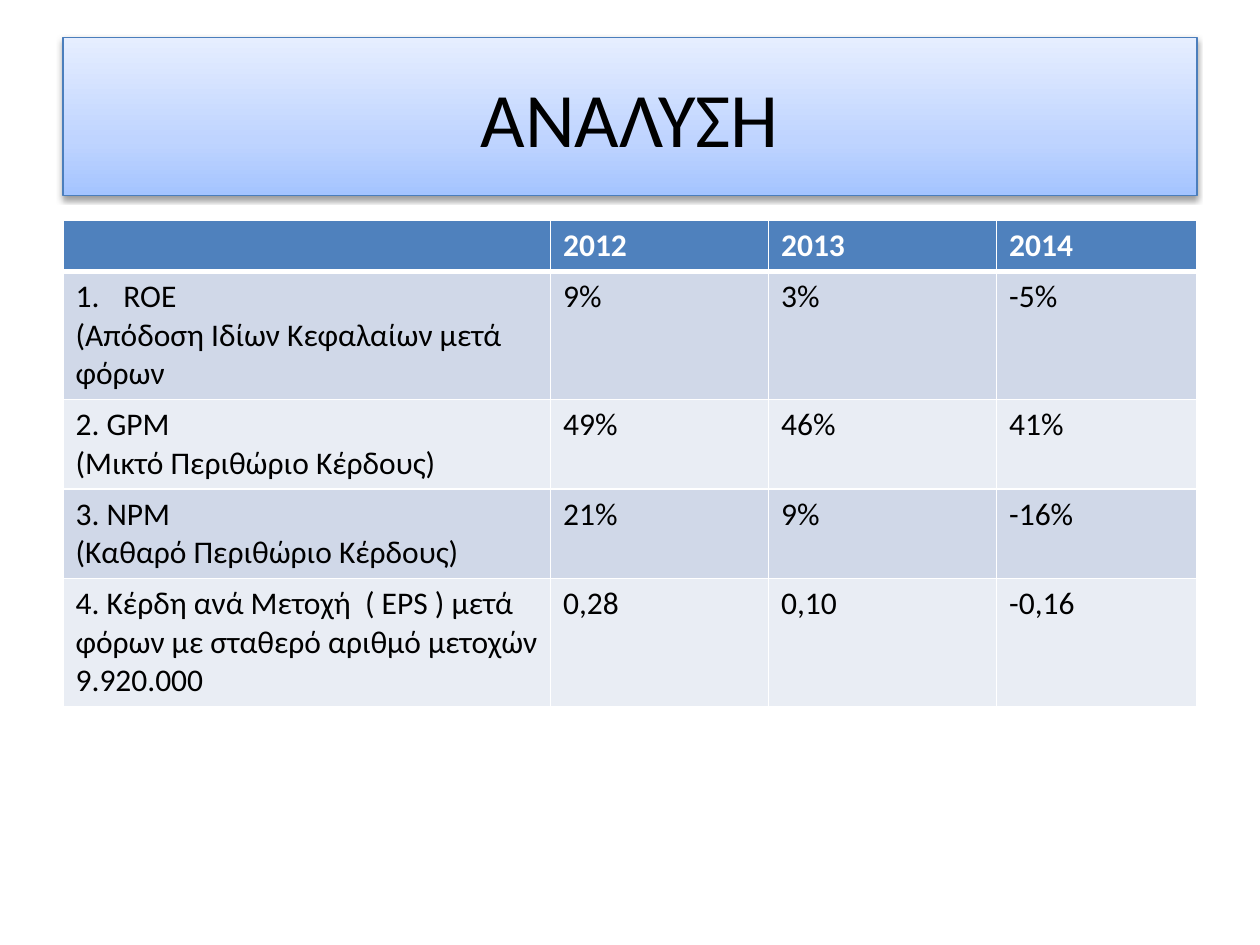
from lxml.etree import SubElement
from pptx import Presentation
from pptx.dml.color import RGBColor
from pptx.enum.shapes import MSO_SHAPE as Shape
from pptx.enum.text import MSO_ANCHOR as Anchor, PP_ALIGN as Align
from pptx.oxml import parse_xml
from pptx.oxml.ns import nsdecls, qn
from pptx.util import Inches, Pt

BLACK = RGBColor(0x00, 0x00, 0x00)
WHITE = RGBColor(0xFF, 0xFF, 0xFF)
HEADER_BLUE = RGBColor(0x4F, 0x81, 0xBD)
OUTLINE_BLUE = RGBColor(0x4B, 0x7E, 0xBC)
BANDS = (RGBColor(0xD0, 0xD8, 0xE8), RGBColor(0xE9, 0xED, 0xF4))
GRADIENT = (
    (0, RGBColor(0xA4, 0xC4, 0xFF)),
    (35, RGBColor(0xBF, 0xD4, 0xFF)),
    (100, RGBColor(0xE6, 0xEE, 0xFF)),
)

FONT = "Calibri"
MARGIN, CONTENT_WIDTH = 0.5, 9
COLUMN_WIDTHS = (3.87, 1.73, 1.81, 1.59)
CELL_PADDING, LINE_HEIGHT = 0.1, 0.305
NUMBER_INDENT = Inches(0.38)

YEARS = ("2012", "2013", "2014")
# Label paragraphs, number of text lines, yearly values
RATIOS = (
    (("ROE", "(Απόδοση Ιδίων Κεφαλαίων μετά φόρων"), 3, ("9%", "3%", "-5%")),
    (("2. GPM", "(Μικτό Περιθώριο Κέρδους)"), 2, ("49%", "46%", "41%")),
    (("3. NPM", "(Καθαρό Περιθώριο Κέρδους)"), 2, ("21%", "9%", "-16%")),
    (("4. Κέρδη ανά Μετοχή  ( EPS ) μετά φόρων με σταθερό αριθμό μετοχών 9.920.000",),
     3, ("0,28", "0,10", "-0,16")),
)


def add_span(para, text, size, color, bold=False):
    span = para.add_run()
    span.text = text
    span.font.name = FONT
    span.font.size = Pt(size)
    span.font.bold = bold
    span.font.color.rgb = color


def add_gradient(box):
    stops = "".join(
        f'<a:gs pos="{share * 1000}"><a:srgbClr val="{color}"/></a:gs>'
        for share, color in GRADIENT
    )
    box._element.spPr.append(parse_xml(
        f'<a:gradFill {nsdecls("a")} rotWithShape="1"><a:gsLst>{stops}</a:gsLst>'
        '<a:lin ang="16200000" scaled="0"/></a:gradFill>'
    ))


def add_shadow(box):
    box.shadow.inherit = False
    effects = box._element.spPr.find(qn("a:effectLst"))
    effects.append(parse_xml(
        f'<a:outerShdw {nsdecls("a")} blurRad="{Pt(3.1)}" dist="{Pt(1.6)}" '
        'dir="5400000" rotWithShape="0"><a:srgbClr val="000000">'
        '<a:alpha val="38000"/></a:srgbClr></a:outerShdw>'
    ))


def add_title(page, text):
    box = page.shapes.add_shape(
        Shape.RECTANGLE, Inches(MARGIN), Inches(0.3), Inches(CONTENT_WIDTH), Inches(1.25))
    add_gradient(box)
    box.line.color.rgb = OUTLINE_BLUE
    box.line.width = Pt(0.75)
    add_shadow(box)
    box.text_frame.word_wrap = True
    box.text_frame.vertical_anchor = Anchor.MIDDLE
    para = box.text_frame.paragraphs[0]
    para.alignment = Align.CENTER
    add_span(para, text, 44, BLACK)


def set_borders(cell, top, bottom):
    properties = cell._tc.get_or_add_tcPr()
    for side, width in (("L", 1), ("R", 1), ("T", top), ("B", bottom)):
        properties.append(parse_xml(
            f'<a:ln{side} {nsdecls("a")} w="{Pt(width)}"><a:solidFill>'
            f'<a:srgbClr val="{WHITE}"/></a:solidFill></a:ln{side}>'
        ))


def fill_cell(cell, texts, fill, color, bold=False, top=1, bottom=1):
    set_borders(cell, top, bottom)
    cell.fill.solid()
    cell.fill.fore_color.rgb = fill
    frame = cell.text_frame
    for index, text in enumerate(texts):
        para = frame.add_paragraph() if index else frame.paragraphs[0]
        add_span(para, text, 18, color, bold)


def number_paragraph(para):
    properties = para._p.get_or_add_pPr()
    properties.set("marL", str(NUMBER_INDENT))
    properties.set("indent", str(-NUMBER_INDENT))
    SubElement(properties, qn("a:buFont"), typeface="+mj-lt")
    SubElement(properties, qn("a:buAutoNum"), type="arabicPeriod")


def add_ratio_table(page):
    line_counts = [1] + [lines for _, lines, _ in RATIOS]
    heights = [CELL_PADDING + LINE_HEIGHT * lines for lines in line_counts]
    table = page.shapes.add_table(
        len(heights), len(COLUMN_WIDTHS), Inches(MARGIN), Inches(1.75),
        Inches(CONTENT_WIDTH), Inches(sum(heights))).table
    for column, width in zip(table.columns, COLUMN_WIDTHS):
        column.width = Inches(width)
    for row, height in zip(table.rows, heights):
        row.height = Inches(height)

    # Header row
    for column, texts in enumerate([()] + [(year,) for year in YEARS]):
        fill_cell(table.cell(0, column), texts, HEADER_BLUE, WHITE, bold=True, bottom=3)

    # Banded ratio rows
    for row, (label, _, values) in enumerate(RATIOS, start=1):
        for column, texts in enumerate([label] + [(value,) for value in values]):
            fill_cell(table.cell(row, column), texts, BANDS[(row - 1) % 2], BLACK,
                      top=3 if row == 1 else 1)
    number_paragraph(table.cell(1, 0).text_frame.paragraphs[0])


def main():
    deck = Presentation()
    deck.slide_width, deck.slide_height = Inches(10), Inches(7.5)
    page = deck.slides.add_slide(deck.slide_layouts[6])
    add_title(page, "ΑΝΑΛΥΣΗ")
    add_ratio_table(page)
    deck.save("out.pptx")


if __name__ == "__main__":
    main()
